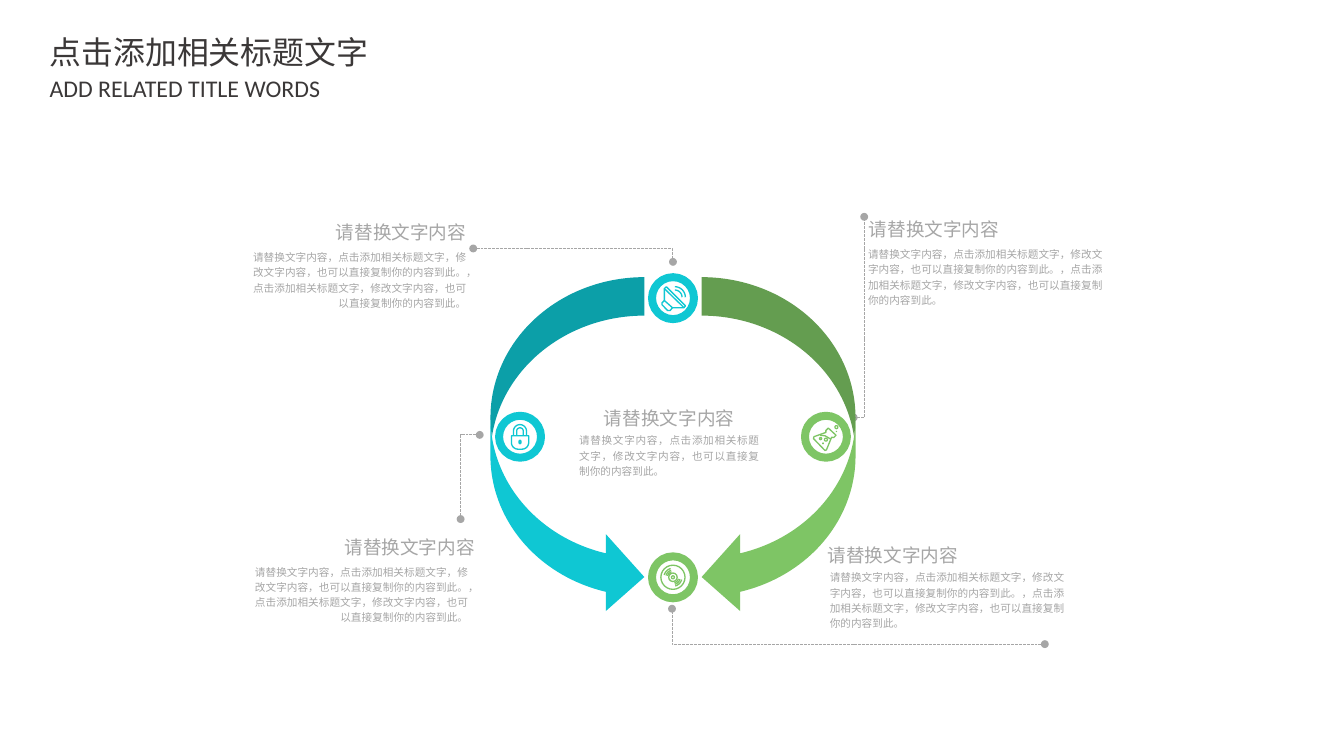
from dataclasses import dataclass
from math import cos, radians, sin

from lxml.etree import SubElement
from pptx import Presentation
from pptx.dml.color import RGBColor
from pptx.enum.dml import MSO_LINE
from pptx.enum.shapes import MSO_CONNECTOR, MSO_SHAPE
from pptx.enum.text import MSO_AUTO_SIZE, PP_ALIGN
from pptx.oxml.ns import qn
from pptx.shapes.autoshape import Shape
from pptx.slide import Slide
from pptx.util import Pt

Point = tuple[float, float]
Box = tuple[float, float, float, float]


@dataclass(frozen=True)
class Theme:
    cyan: RGBColor = RGBColor(0x0F, 0xC7, 0xD3)
    green: RGBColor = RGBColor(0x7E, 0xC5, 0x65)
    gray: RGBColor = RGBColor(0xA6, 0xA6, 0xA6)
    dark: RGBColor = RGBColor(0x3B, 0x38, 0x38)
    white: RGBColor = RGBColor(0xFF, 0xFF, 0xFF)
    font: str = "Arial"
    title_font: str = "Noto Sans CJK SC"
    subtitle_font: str = "Calibri"
    title_size: float = 24
    subtitle_size: float = 18
    heading_size: float = 14
    body_size: float = 8


THEME = Theme()
HEADING = "请替换文字内容"
SENTENCE = "点击添加相关标题文字，修改文字内容，也可以直接复制你的内容到此。"
SHORT_BODY = f"{HEADING}，{SENTENCE}"
LONG_BODY = f"{SHORT_BODY}，{SENTENCE}"


@dataclass(frozen=True)
class Stroke:
    points: list[Point]
    closed: bool = False


@dataclass(frozen=True)
class Circle:
    x: float
    y: float
    radius: float
    filled: bool = False
    stretch: float = 1


@dataclass(frozen=True)
class Station:
    center: Point
    color: RGBColor
    icon: list[Stroke | Circle]


@dataclass(frozen=True)
class Callout:
    heading: Point
    body: Point
    body_width: float
    align: PP_ALIGN


def arc(x: float, y: float, radius: float, start: int, end: int) -> list[Point]:
    angles = [radians(start + (end - start) * step / 12) for step in range(13)]
    return [(x + radius * cos(angle), y + radius * sin(angle)) for angle in angles]


# Icons, measured from the centre of their ring
SPEAKER = [
    Stroke([(-6.5, 1.8), (-6.5, -7.2), (-5, -8.6), (9.4, 5.8), (8.3, 7.2), (-0.4, 7.2)], True),
    Stroke([(-6.5, -7.2), (8.3, 7.2)]),
    Stroke([(-6.5, 1.8), (-8.3, 3.6), (-8.3, 5), (-4, 9.4), (-2.2, 9.4), (-0.4, 7.2)]),
    *[Stroke(arc(1.4, -0.7, radius, -90, 0)) for radius in (5.4, 7.9)],
]
FLASK = [
    Stroke([(0, -4.7), (1.8, -6.5), (7.6, -1.1), (5.8, 0.7), (4.3, 0.4), (0.4, 10),
            (-0.7, 10.4), (-9.4, 1.4), (-9, 0), (0, -3.2)], True),
    Stroke([(-4.3, -1.1), (-0.7, -0.7), (3.6, 1.8)]),
    Circle(0, 2.2, 1.1), Circle(7.9, -7.2, 1.1), Circle(-4, 1.4, 0.8),
    Circle(-2.2, 5, 0.7, True), Circle(7.9, -4, 0.5, True),
]
DISC = [
    *[Circle(0, 0, radius) for radius in (9.1, 3.2, 1.1)],
    *[Stroke(arc(0, 0, radius, start, start + 60))
      for start in (15, 195) for radius in (4.2, 5.4, 6.8)],
]
LOCK = [
    Stroke([(-6.5, -0.7), (6.5, -0.7), *arc(1.5, 4.4, 5, 0, 90), *arc(-1.5, 4.4, 5, 90, 180)], True),
    *[Stroke([(-radius, -0.7), *arc(0, -4.2, radius, 180, 360), (radius, -0.7)])
      for radius in (4.9, 2.5)],
    Circle(0, 4, 1.3, True, 1.4),
]

STATIONS = [
    Station((506.9, 224.6), THEME.cyan, SPEAKER),
    Station((622.1, 329), THEME.green, FLASK),
    Station((506.9, 434.9), THEME.green, DISC),
    Station((391.7, 329), THEME.cyan, LOCK),
]
CALLOUTS = [
    Callout((252.7, 163.4), (186.5, 187.2), 164.9, PP_ALIGN.RIGHT),
    Callout((259.2, 400.3), (187.9, 424.1), 164.9, PP_ALIGN.RIGHT),
    Callout((654.5, 160.6), (653.8, 185), 178.6, PP_ALIGN.LEFT),
    Callout((623.5, 406.1), (625, 428.4), 178.6, PP_ALIGN.LEFT),
]
# Each leader runs sideways first, then up or down
LEADERS = [
    ((643, 314.6), (650.9, 163.4)),
    ((787, 485.3), (506.2, 458.6)),
    ((361.4, 327.6), (347, 391)),
    ((356.4, 187.2), (506.9, 197.3)),
]


def add_text(slide: Slide, text: str, box: Box, *, size: float, color: RGBColor = THEME.gray,
             font: str = THEME.font, align: PP_ALIGN = PP_ALIGN.LEFT, wrap: bool = False,
             spacing: float = 1.2, inset: Point = (0, 0)) -> None:
    frame = slide.shapes.add_textbox(*map(Pt, box)).text_frame
    frame.word_wrap = wrap
    frame.auto_size = MSO_AUTO_SIZE.SHAPE_TO_FIT_TEXT
    frame.margin_left = frame.margin_right = Pt(inset[0])
    frame.margin_top = frame.margin_bottom = Pt(inset[1])
    paragraph = frame.paragraphs[0]
    paragraph.alignment = align
    paragraph.line_spacing = spacing
    run = paragraph.add_run()
    run.text = text
    run.font.size = Pt(size)
    run.font.name = font
    run.font.color.rgb = color
    SubElement(run.font._element, qn("a:ea")).set("typeface", font)


def format_shape(shape: Shape, fill: RGBColor | None, line: RGBColor | None, width: float = 1) -> None:
    shape.shadow.inherit = False
    for target, color in ((shape.fill, fill), (shape.line.fill, line)):
        if color is None:
            target.background()
        else:
            target.solid()
            target.fore_color.rgb = color
    if line is not None:
        shape.line.width = Pt(width)


def add_circle(slide: Slide, circle: Circle, center: Point) -> Shape:
    height = circle.radius * circle.stretch
    return slide.shapes.add_shape(
        MSO_SHAPE.OVAL, Pt(center[0] + circle.x - circle.radius), Pt(center[1] + circle.y - height),
        Pt(2 * circle.radius), Pt(2 * height))


def add_icon(slide: Slide, station: Station) -> None:
    for part in station.icon:
        if isinstance(part, Circle):
            shape = add_circle(slide, part, station.center)
            filled = part.filled
        else:
            points = [(Pt(station.center[0] + x), Pt(station.center[1] + y)) for x, y in part.points]
            builder = slide.shapes.build_freeform(*points[0])
            builder.add_line_segments(points[1:], close=part.closed)
            shape = builder.convert_to_shape()
            filled = False
        format_shape(shape, station.color if filled else None, None if filled else station.color)


def add_leader(slide: Slide, start: Point, end: Point) -> None:
    connector = slide.shapes.add_connector(MSO_CONNECTOR.ELBOW, *map(Pt, (*start, *end)))
    connector.line.color.rgb = THEME.gray
    connector.line.width = Pt(0.75)
    connector.line.dash_style = MSO_LINE.SQUARE_DOT
    properties = connector._element.spPr
    properties.find(qn("a:prstGeom")).set("prst", "bentConnector2")
    for tag in ("a:headEnd", "a:tailEnd"):
        SubElement(properties.find(qn("a:ln")), qn(tag)).set("type", "oval")
    SubElement(properties, qn("a:effectLst"))


def add_arrow(slide: Slide, left: float, color: RGBColor, mirrored: bool) -> None:
    shape = slide.shapes.add_shape(MSO_SHAPE.CURVED_RIGHT_ARROW, *map(Pt, (left, 208.8, 115.9, 254.9)))
    format_shape(shape, color, None)
    if mirrored:
        shape._element.spPr.find(qn("a:xfrm")).set("flipH", "1")


def main() -> None:
    presentation = Presentation()
    presentation.slide_width, presentation.slide_height = Pt(1012.32), Pt(569.52)
    slide = presentation.slides.add_slide(presentation.slide_layouts[6])
    # Cycle: leaders, rings, arrows and icons
    for start, end in LEADERS:
        add_leader(slide, start, end)
    for station in STATIONS:
        format_shape(add_circle(slide, Circle(0, 0, 15.8), station.center), THEME.white, station.color, 6)
    add_arrow(slide, 369.4, THEME.cyan, False)
    add_arrow(slide, 528.5, THEME.green, True)
    for station in STATIONS:
        add_icon(slide, station)
    # Centre text
    add_text(slide, HEADING, (447.1, 299.5, 113.8, 27.4), size=THEME.heading_size,
             align=PP_ALIGN.CENTER, inset=(7.2, 3.6))
    add_text(slide, SHORT_BODY, (429.1, 321.8, 149.8, 42.5), size=THEME.body_size,
             align=PP_ALIGN.JUSTIFY, wrap=True, inset=(7.2, 3.6))
    # Callouts
    for callout in CALLOUTS:
        add_text(slide, HEADING, (*callout.heading, 98.6, 20.2), size=THEME.heading_size, align=callout.align)
        add_text(slide, LONG_BODY, (*callout.body, callout.body_width, 46.8), size=THEME.body_size,
                 align=callout.align, wrap=True)
    # Slide titles
    add_text(slide, "点击添加相关标题文字", (29.5, 20.9, 257.8, 36.7), size=THEME.title_size,
             color=THEME.dark, font=THEME.title_font, spacing=1.0, inset=(7.9, 3.6))
    add_text(slide, "ADD RELATED TITLE WORDS", (29.5, 51.8, 221, 29.5), size=THEME.subtitle_size,
             color=THEME.dark, font=THEME.subtitle_font, spacing=1.0, inset=(7.9, 3.6))
    presentation.save("out.pptx")


if __name__ == "__main__":
    main()
